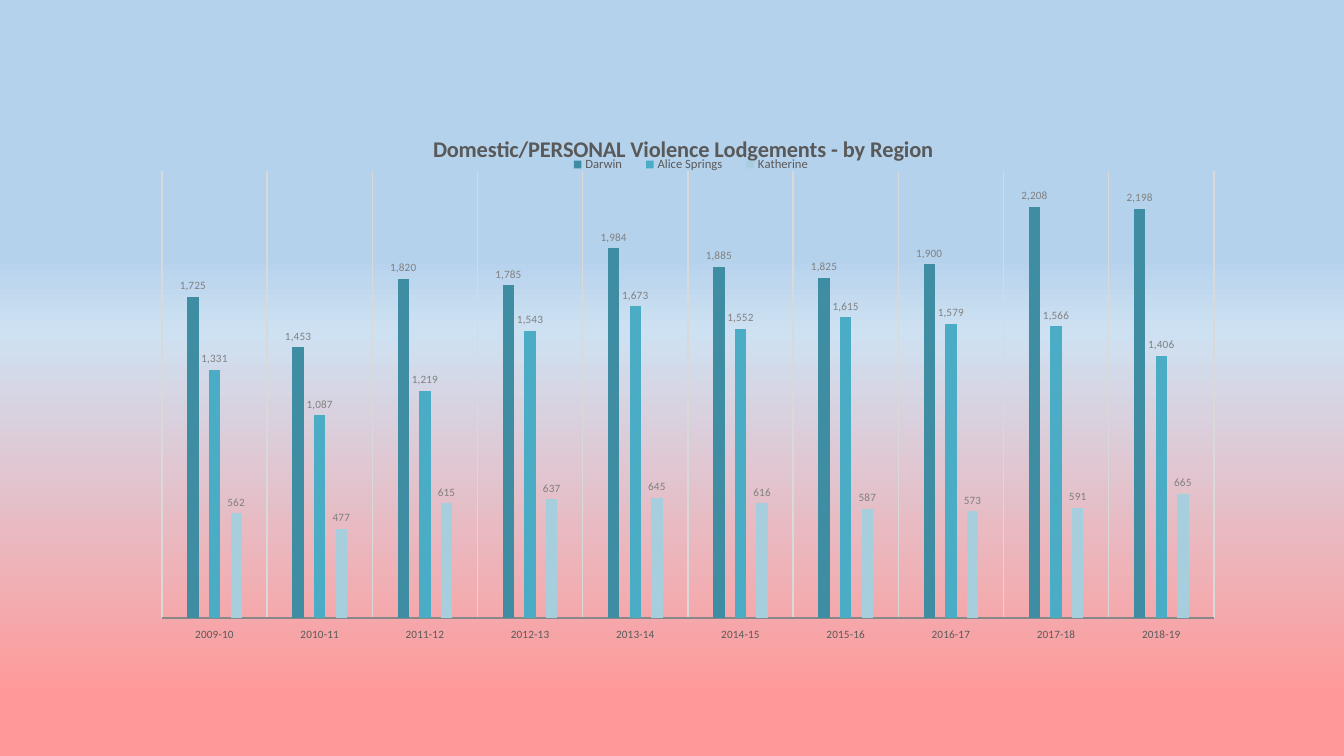
from lxml import etree
from pptx import Presentation
from pptx import util as u
from pptx.chart.data import CategoryChartData
from pptx.dml.color import RGBColor
from pptx.enum import chart as ch
from pptx.oxml import ns

PX = 914400 / 100.8
FONT = "Calibri"
SKY = RGBColor(0xB5, 0xD2, 0xEC)
PALE_SKY = RGBColor(0xCE, 0xE1, 0xF2)
CORAL = RGBColor(0xFF, 0x99, 0x99)
DARK_GREY = RGBColor(0x59, 0x59, 0x59)
LABEL_GREY = RGBColor(0x80, 0x80, 0x80)
AXIS_GREY = RGBColor(0x88, 0x88, 0x88)
GRID_GREY = RGBColor(0xD9, 0xD9, 0xD9)
BLACK = RGBColor(0, 0, 0)
TEAL = RGBColor(0x3E, 0x8D, 0xA3)
AQUA = RGBColor(0x4B, 0xAC, 0xC6)
PALE_AQUA = RGBColor(0xA7, 0xCE, 0xDC)

BACKGROUND_STOPS = [(19, SKY), (34, SKY), (44, PALE_SKY), (92, CORAL)]
YEARS = [f"{year}-{year % 100 + 1}" for year in range(2009, 2019)]
REGIONS = [
    ("Darwin", TEAL, [1725, 1453, 1820, 1785, 1984, 1885, 1825, 1900, 2208, 2198]),
    ("Alice Springs", AQUA, [1331, 1087, 1219, 1543, 1673, 1552, 1615, 1579, 1566, 1406]),
    ("Katherine", PALE_AQUA, [562, 477, 615, 637, 645, 616, 587, 573, 591, 665]),
]
CHART_WIDTH, CHART_HEIGHT = 1072, 536


def style_font(font, size, color):
    font.name = FONT
    font.size = u.Pt(size)
    font.color.rgb = color


def set_manual_layout(parent, index, left, top, width=None, height=None, target=None):
    """Place a chart part, in px from the chart's corner; index is the layout's place in parent."""
    for old in parent.findall(ns.qn("c:layout")):
        parent.remove(old)
    layout = etree.Element(ns.qn("c:layout"))
    manual = etree.SubElement(layout, ns.qn("c:manualLayout"))
    settings = {"layoutTarget": target, "xMode": "edge", "yMode": "edge",
                "x": left / CHART_WIDTH, "y": top / CHART_HEIGHT,
                "w": width and width / CHART_WIDTH, "h": height and height / CHART_HEIGHT}
    for tag, value in settings.items():
        if value is not None:
            etree.SubElement(manual, ns.qn(f"c:{tag}")).set("val", str(value))
    parent.insert(index, layout)


deck = Presentation()
deck.slide_width = u.Emu(round(1344 * PX))
deck.slide_height = u.Emu(round(756 * PX))
slide = deck.slides.add_slide(deck.slide_layouts[6])

# Background gradient, running from top to bottom
fill = slide.background.fill
fill.gradient()
fill.gradient_angle = 270
stop_list = slide._element.find(".//" + ns.qn("a:gsLst"))
for old_stop in list(stop_list):
    stop_list.remove(old_stop)
for percent, color in BACKGROUND_STOPS:
    stop = etree.SubElement(stop_list, ns.qn("a:gs"), pos=str(percent * 1000))
    etree.SubElement(stop, ns.qn("a:srgbClr"), val=str(color))

# Chart
data = CategoryChartData(number_format="#,##0")
data.categories = YEARS
for name, color, values in REGIONS:
    data.add_series(name, values)
left, top, width, height = [
    u.Emu(round(n * PX)) for n in (147, 130, CHART_WIDTH, CHART_HEIGHT)]
chart = slide.shapes.add_chart(
    ch.XL_CHART_TYPE.COLUMN_CLUSTERED, left, top, width, height, data).chart
style_font(chart.font, 10, BLACK)

# Title
chart.has_title = True
title_frame = chart.chart_title.text_frame
title_frame.text = "Domestic/PERSONAL Violence Lodgements - by Region"
title_font = title_frame.paragraphs[0].runs[0].font
style_font(title_font, 16, DARK_GREY)
title_font.bold = True
title = chart._chartSpace.chart.find(ns.qn("c:title"))
set_manual_layout(title, 1, 282, 0)
overlay = title.find(ns.qn("c:overlay"))
if overlay is None:
    overlay = etree.SubElement(title, ns.qn("c:overlay"))
overlay.set("val", "1")

# Legend
chart.has_legend = True
legend = chart.legend
legend.position = ch.XL_LEGEND_POSITION.TOP
legend.include_in_layout = True
style_font(legend.font, 9, DARK_GREY)
set_manual_layout(legend._element, 1, 407, 21, 274, 27)

# Axes
years_axis = chart.category_axis
years_axis.major_tick_mark = ch.XL_TICK_MARK.NONE
years_axis.tick_label_position = ch.XL_TICK_LABEL_POSITION.LOW
style_font(years_axis.tick_labels.font, 8, DARK_GREY)
years_axis.has_major_gridlines = True
for line, color in ((years_axis.format.line, AXIS_GREY),
                    (years_axis.major_gridlines.format.line, GRID_GREY)):
    line.color.rgb = color
    line.width = u.Pt(1)

count_axis = chart.value_axis
count_axis.minimum_scale = 0
count_axis.maximum_scale = 2400
count_axis.major_unit = 600
count_axis.has_major_gridlines = False
count_axis.major_tick_mark = ch.XL_TICK_MARK.NONE
count_axis.tick_label_position = ch.XL_TICK_LABEL_POSITION.NONE
count_axis.format.line.fill.background()

# Columns and their values
plot = chart.plots[0]
plot.vary_by_categories = False
plot.gap_width = 444
plot.overlap = -90
set_manual_layout(chart._chartSpace.chart.plotArea, 0, 15, 41, 1052, 447, "inner")
for series, (name, color, values) in zip(plot.series, REGIONS):
    series.format.fill.solid()
    series.format.fill.fore_color.rgb = color
    labels = series.data_labels
    labels.show_value = True
    labels.position = ch.XL_LABEL_POSITION.OUTSIDE_END
    labels.number_format = "#,##0"
    labels.number_format_is_linked = False
    style_font(labels.font, 8, LABEL_GREY)

deck.save("out.pptx")
